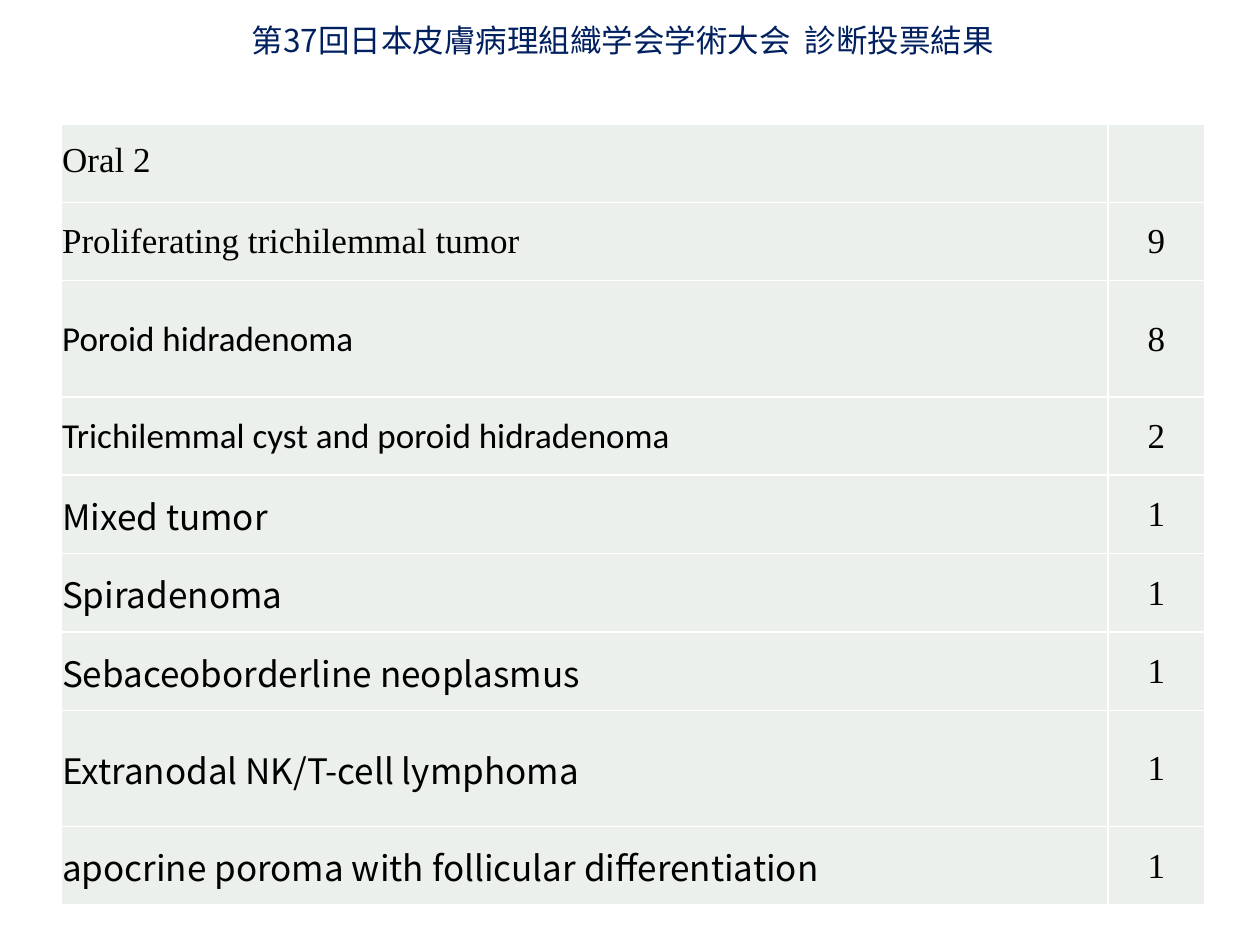
"""Build the diagnosis vote slide: a heading above a two-column table of results."""
from lxml import etree
from pptx import Presentation
from pptx.dml.color import RGBColor
from pptx.enum import text
from pptx.oxml import ns
from pptx.util import Pt

SERIF, SANS, GOTHIC = "Times New Roman", "Calibri", "Noto Sans CJK JP"
NAVY, BLACK, WHITE, PALE = "002060", "000000", "FFFFFF", "EBF0EC"
TITLE = "第37回日本皮膚病理組織学会学術大会  診断投票結果"
SHORT, TALL = 44.8, 66.4
VOTES = [
    ("Oral 2", "", SERIF, SHORT),
    ("Proliferating trichilemmal tumor", "9", SERIF, SHORT),
    ("Poroid hidradenoma", "8", SANS, TALL),
    ("Trichilemmal cyst and poroid hidradenoma", "2", SANS, SHORT),
    ("Mixed tumor", "1", GOTHIC, SHORT),
    ("Spiradenoma", "1", GOTHIC, SHORT),
    ("Sebaceoborderline neoplasmus", "1", GOTHIC, SHORT),
    ("Extranodal NK/T-cell lymphoma", "1", GOTHIC, TALL),
    ("apocrine poroma with follicular differentiation", "1", GOTHIC, SHORT),
]
TITLE_BOX = (136.8, 8.6, 446.4, 28.8)
LEFT, TOP, COLUMNS = 34.8, 70.8, (598.3, 55.4)
CELL = {
    "vertical_anchor": text.MSO_ANCHOR.MIDDLE,
    "margin_left": Pt(0.7),
    "margin_right": Pt(0.7),
    "margin_top": Pt(0.7),
    "margin_bottom": Pt(0),
}


def color(value):
    return RGBColor.from_string(value)


def apply(target, values):
    for name, value in values.items():
        setattr(target, name, value)


def write(p, words, font, size, fill):
    r = p.add_run()
    r.text = words
    apply(r.font, {"name": font, "size": Pt(size)})
    r.font.color.rgb = color(fill)
    for tag in ("a:ea", "a:cs"):
        etree.SubElement(r.font._element, ns.qn(tag), typeface=font)


def add_borders(cell):
    props = cell._tc.get_or_add_tcPr()
    for side in ("a:lnL", "a:lnR", "a:lnT", "a:lnB"):
        line = etree.SubElement(props, ns.qn(side), w=str(Pt(1)))
        fill = etree.SubElement(line, ns.qn("a:solidFill"))
        etree.SubElement(fill, ns.qn("a:srgbClr"), val=WHITE)


def fill_cell(cell, words, font, align):
    apply(cell, CELL)
    add_borders(cell)
    cell.fill.solid()
    cell.fill.fore_color.rgb = color(PALE)
    p = cell.text_frame.paragraphs[0]
    p.alignment = align
    if words:
        write(p, words, font, 20, BLACK)


def add_title(s):
    tf = s.shapes.add_textbox(*map(Pt, TITLE_BOX)).text_frame
    apply(tf, {"word_wrap": True, "auto_size": text.MSO_AUTO_SIZE.SHAPE_TO_FIT_TEXT})
    write(tf.paragraphs[0], TITLE, GOTHIC, 18, NAVY)


def add_votes(s):
    height = sum(row[-1] for row in VOTES)
    frame = (LEFT, TOP, sum(COLUMNS), height)
    table = s.shapes.add_table(len(VOTES), len(COLUMNS), *map(Pt, frame)).table
    apply(table, {"first_row": False, "horz_banding": False})
    for column, width in zip(table.columns, COLUMNS):
        column.width = Pt(width)
    for row, (diagnosis, count, font, row_height) in zip(table.rows, VOTES):
        row.height = Pt(row_height)
        fill_cell(row.cells[0], diagnosis, font, text.PP_ALIGN.LEFT)
        fill_cell(row.cells[1], count, SERIF, text.PP_ALIGN.CENTER)
    table.cell(0, 0).margin_bottom = Pt(3.6)


def main():
    prs = Presentation()
    apply(prs, {"slide_width": Pt(720), "slide_height": Pt(540)})
    s = prs.slides.add_slide(prs.slide_layouts[6])
    add_title(s)
    add_votes(s)
    prs.save("out.pptx")


if __name__ == "__main__":
    main()
